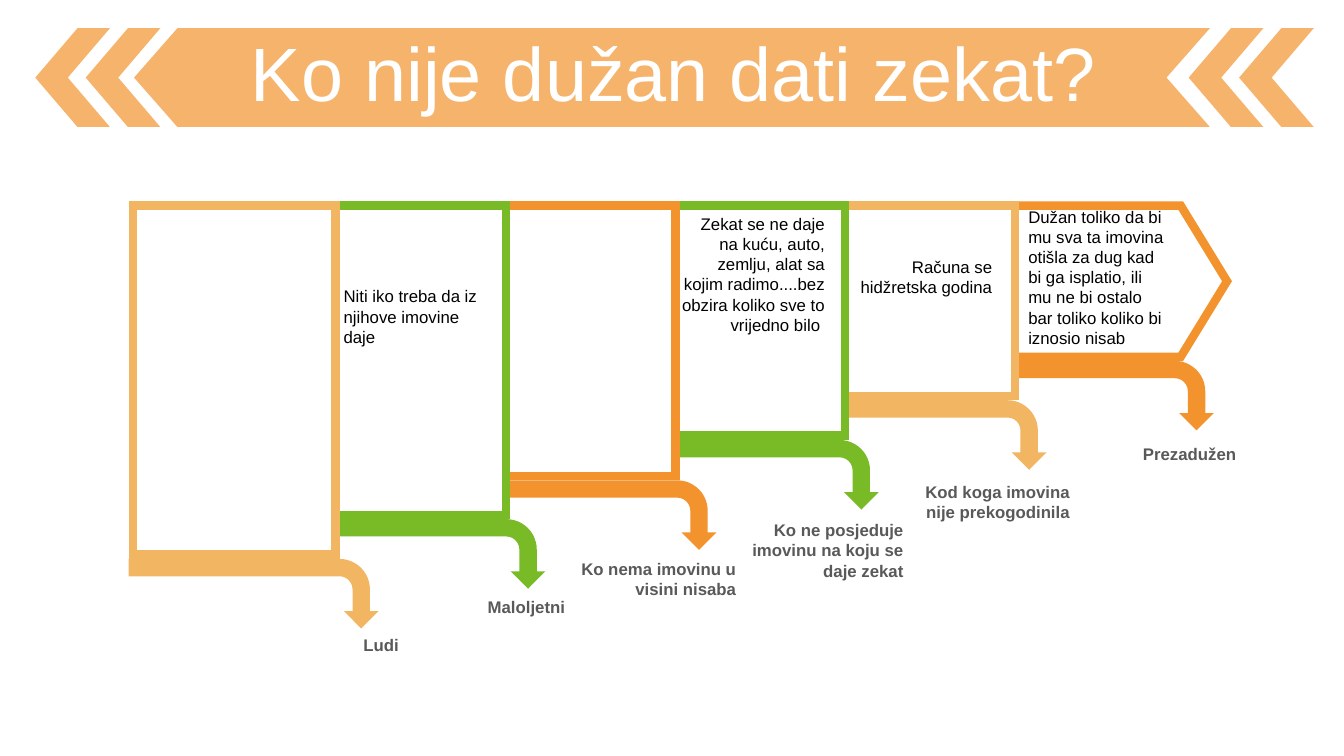
import dataclasses

import lxml.etree
import pptx
import pptx.dml.color
import pptx.enum.shapes
import pptx.enum.text
import pptx.oxml.ns
import pptx.util

PX = 9144
ORANGE, GREEN, SAND = "F3932D", "79BA27", "F2B662"
WHITE, BLACK, GRAY = "FFFFFF", "000000", "595959"
KIND = pptx.enum.shapes.MSO_SHAPE
ALIGN = pptx.enum.text.PP_ALIGN
FIT = pptx.enum.text.MSO_AUTO_SIZE
ANCHOR = pptx.enum.text.MSO_ANCHOR
qn = pptx.oxml.ns.qn


@dataclasses.dataclass
class Box:
    left: int
    top: int
    width: int
    height: int

    def emu(self) -> list[int]:
        return [side * PX for side in dataclasses.astuple(self)]


@dataclasses.dataclass
class Step:
    label: str
    color: str
    left: int
    width: int
    tip: int
    length: int
    rows: int


@dataclasses.dataclass
class Note:
    text: str
    box: Box
    align: ALIGN


STEPS = [
    Step("Ludi ", SAND, 132, 201, 376, 248, 1),
    Step("Maloljetni ", GREEN, 285, 217, 541, 217, 1),
    Step("Ko nema imovinu u visini nisaba", ORANGE, 453, 217, 711, 210, 2),
    Step("Ko ne posjeduje imovinu na koju se daje zekat", GREEN, 621, 217, 872, 202, 3),
    Step("Kod koga imovina nije prekogodinila", SAND, 790, 217, 1038, 199, 2),
    Step("Prezadužen", ORANGE, 984, 233, 1204, 197, 1),
]
NOTES = [
    Note("Niti iko treba da iz njihove imovine daje", Box(331, 279, 160, 71), ALIGN.LEFT),
    Note("Zekat se ne daje na kuću, auto, zemlju, alat sa kojim radimo....bez "
         "obzira koliko sve to vrijedno bilo ", Box(666, 207, 162, 131), ALIGN.RIGHT),
    Note("Računa se hidžretska godina", Box(837, 250, 157, 50), ALIGN.RIGHT),
    Note("Dužan toliko da bi mu sva ta imovina otišla za dug kad bi ga isplatio, "
         "ili mu ne bi ostalo bar toliko koliko bi iznosio nisab",
         Box(1010, 200, 159, 152), ALIGN.LEFT),
]
TOP, TALL, DROP, THICK = 204, 346, 39.2, 69


def rgb(code: str) -> pptx.dml.color.RGBColor:
    return pptx.dml.color.RGBColor.from_string(code)


def paint(shape, color: str, alpha: int = 100) -> None:
    shape.shadow.inherit = False
    shape.fill.solid()
    shape.fill.fore_color.rgb = rgb(color)
    shape.line.fill.background()
    if alpha < 100:
        tint = shape.fill._xPr.find(".//" + qn("a:srgbClr"))
        lxml.etree.SubElement(tint, qn("a:alpha"), val=str(alpha * 1000))


def border(shape, color: str) -> None:
    shape.line.color.rgb = rgb(color)
    shape.line.width = pptx.util.Pt(6)
    lxml.etree.SubElement(shape.line._get_or_add_ln(), qn("a:miter"), lim="800000")


def write(slide, box: Box, text: str, align: ALIGN, color: str,
          size: int = 12, bold: bool = False):
    frame = slide.shapes.add_textbox(*box.emu()).text_frame
    frame.word_wrap = True
    frame.auto_size = FIT.SHAPE_TO_FIT_TEXT
    para = frame.paragraphs[0]
    para.alignment = align
    run = para.add_run()
    run.text = text
    run.font.name = "Arial"
    run.font.size = pptx.util.Pt(size)
    run.font.bold = bold
    run.font.color.rgb = rgb(color)
    return frame


def banner(slide) -> None:
    for left in (35, 85, 1179, 1229):
        mark = slide.shapes.add_shape(KIND.CHEVRON, *Box(left, 28, 74, 98).emu())
        mark.adjustments[0] = 0.565
        mark.rotation = 180
        paint(mark, ORANGE, 70)
    pen = slide.shapes.build_freeform(176, 28, scale=PX)
    pen.add_line_segments([(1200, 28), (1157, 77), (1200, 126), (176, 126), (133, 77)])
    paint(pen.convert_to_shape(), ORANGE, 70)
    frame = write(slide, Box(35, 37, 1266, 79), "Ko nije dužan dati zekat?",
                  ALIGN.CENTER, WHITE, 54)
    frame.auto_size = FIT.NONE
    frame.vertical_anchor = ANCHOR.MIDDLE
    frame.paragraphs[0].line_spacing = 0.9


def height(index: int) -> int:
    return round(TALL - DROP * index)


def arrow(slide, index: int, step: Step) -> None:
    shift = (step.length - THICK) // 2
    box = Box(step.tip - step.length + shift, TOP + height(index) + 4 - shift,
              THICK, step.length)
    bend = slide.shapes.add_shape(KIND.BENT_ARROW, *box.emu())
    bend.rotation = 90
    paint(bend, step.color)


def panel(slide, index: int, step: Step) -> None:
    last = index == len(STEPS) - 1
    kind = KIND.PENTAGON if last else KIND.RECTANGLE
    box = Box(step.left, TOP, step.width, height(index))
    shape = slide.shapes.add_shape(kind, *box.emu())
    if last:
        shape.adjustments[0] = 0.306
    paint(shape, WHITE)
    border(shape, step.color)


def label(slide, index: int, step: Step) -> None:
    box = Box(round(225 + 165.2 * index), 625 - 38 * index, 185, 10 + 20 * step.rows)
    write(slide, box, step.label, ALIGN.RIGHT, GRAY, bold=True)


def main() -> None:
    deck = pptx.Presentation()
    deck.slide_width, deck.slide_height = 1333 * PX, 750 * PX
    slide = deck.slides.add_slide(deck.slide_layouts[6])
    banner(slide)
    order = list(enumerate(STEPS))
    for index, step in order:
        arrow(slide, index, step)
    for index, step in reversed(order):
        panel(slide, index, step)
    for note in NOTES:
        write(slide, note.box, note.text, note.align, BLACK)
    for index, step in order:
        label(slide, index, step)
    deck.save("out.pptx")


if __name__ == "__main__":
    main()
